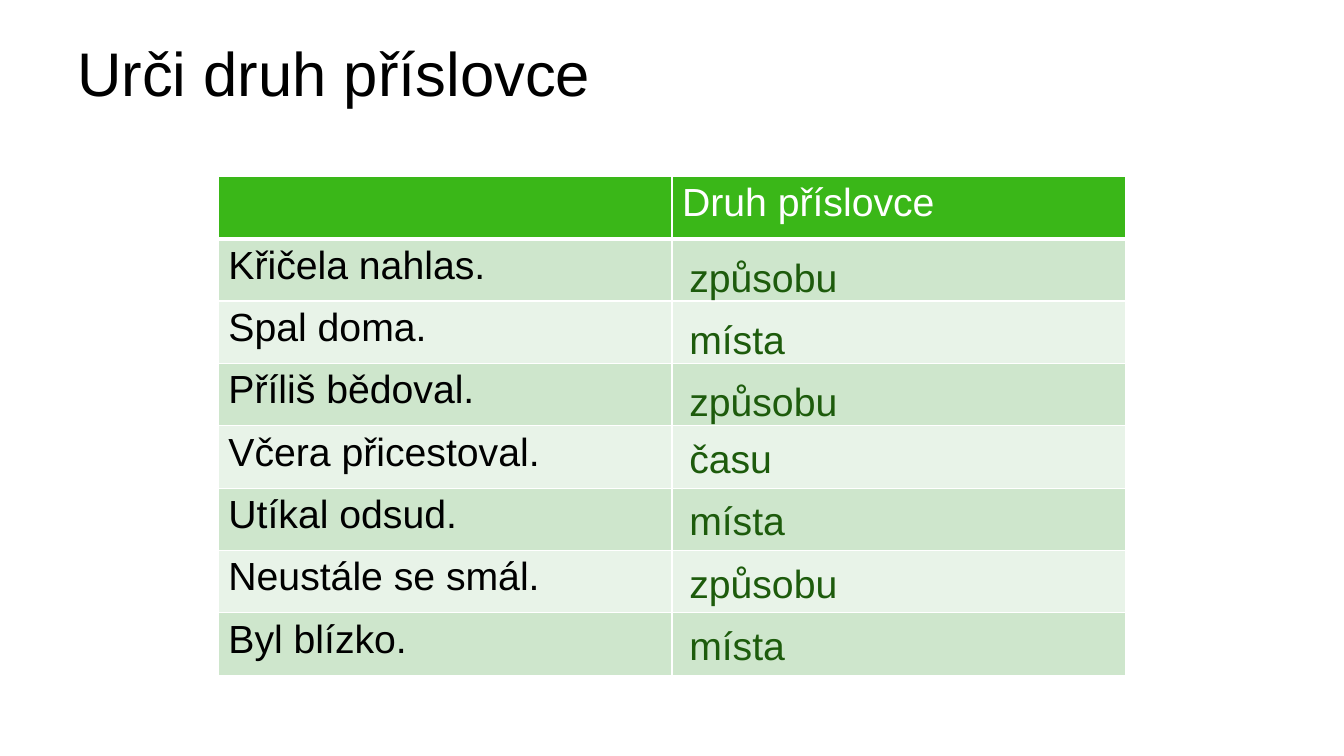
from pptx import Presentation
from pptx.dml.color import RGBColor
from pptx.enum.text import MSO_ANCHOR
from pptx.oxml.xmlchemy import OxmlElement
from pptx.util import Pt

TOP = MSO_ANCHOR.TOP

# Content: sentence, kind of adverb, drop of the answer below its row's top
TITLE = "Urči druh příslovce"
HEADER = ("", "Druh příslovce")
EXERCISES = [
    ("Křičela nahlas.", "způsobu", 4.2),
    ("Spal doma.", "místa", 4.2),
    ("Příliš bědoval.", "způsobu", 4.2),
    ("Včera přicestoval.", "času", 0),
    ("Utíkal odsud.", "místa", 0),
    ("Neustále se smál.", "způsobu", 0),
    ("Byl blízko.", "místa", 0),
]

THEME = {
    "font": "Arial", "title_size": 44, "body_size": 28,
    "text": "000000", "header_text": "FFFFFF", "answer": "1D5B0C",
    "header_fill": "3AB718", "bands": ("CEE6CC", "E8F3E8"), "border": "FFFFFF",
}

# Layout in points
SLIDE_SIZE = (960, 540)
TITLE_BOX = (48, 21.6, 864, 90)
TABLE_LEFT, TABLE_TOP, COLUMN_WIDTH, ROW_HEIGHT = 156, 126, 324, 44.55
ANSWER_LEFT, ANSWER_WIDTH, ANSWER_HEIGHT = 485.3, 295.2, 41


def write(frame, text, size, color):
    para = frame.paragraphs[0]
    para.text = text
    para.font.name = THEME["font"]
    para.font.size = Pt(size)
    para.font.color.rgb = RGBColor.from_string(color)


def add_text(slide, bounds, text, size, color):
    box = slide.shapes.add_textbox(*map(Pt, bounds))
    frame = box.text_frame
    frame.word_wrap = True
    frame.vertical_anchor = TOP
    write(frame, text, size, color)
    return frame


def add_borders(cell, bottom_width):
    properties = cell._tc.get_or_add_tcPr()
    for side, width in (("L", 1), ("R", 1), ("T", 1), ("B", bottom_width)):
        line = OxmlElement(f"a:ln{side}")
        line.set("w", str(Pt(width)))
        fill = OxmlElement("a:solidFill")
        color = OxmlElement("a:srgbClr")
        color.set("val", THEME["border"])
        fill.append(color)
        line.append(fill)
        properties.append(line)


def style_cell(cell, text, color, fill, bottom_width):
    add_borders(cell, bottom_width)
    cell.fill.solid()
    cell.fill.fore_color.rgb = RGBColor.from_string(fill)
    if text:
        write(cell.text_frame, text, THEME["body_size"], color)


def add_exercise_table(slide):
    rows = [HEADER] + [(sentence, "") for sentence, _, _ in EXERCISES]
    table = slide.shapes.add_table(
        len(rows), len(HEADER), Pt(TABLE_LEFT), Pt(TABLE_TOP),
        Pt(COLUMN_WIDTH * len(HEADER)), Pt(ROW_HEIGHT * len(rows))).table
    for column in table.columns:
        column.width = Pt(COLUMN_WIDTH)
    for index, texts in enumerate(rows):
        table.rows[index].height = Pt(ROW_HEIGHT)
        if index == 0:
            style = (THEME["header_text"], THEME["header_fill"], 3)
        else:
            style = (THEME["text"], THEME["bands"][(index - 1) % 2], 1)
        for column, text in enumerate(texts):
            style_cell(table.cell(index, column), text, *style)


def add_answers(slide):
    for row, (_, answer, drop) in enumerate(EXERCISES, start=1):
        top = TABLE_TOP + row * ROW_HEIGHT + drop
        frame = add_text(slide, (ANSWER_LEFT, top, ANSWER_WIDTH, ANSWER_HEIGHT),
                         answer, THEME["body_size"], THEME["answer"])
        frame.margin_top, frame.margin_bottom = Pt(6), Pt(2)


def main():
    deck = Presentation()
    deck.slide_width, deck.slide_height = map(Pt, SLIDE_SIZE)
    page = deck.slides.add_slide(deck.slide_layouts[6])
    add_text(page, TITLE_BOX, TITLE, THEME["title_size"], THEME["text"])
    add_exercise_table(page)
    add_answers(page)
    deck.save("out.pptx")


if __name__ == "__main__":
    main()
